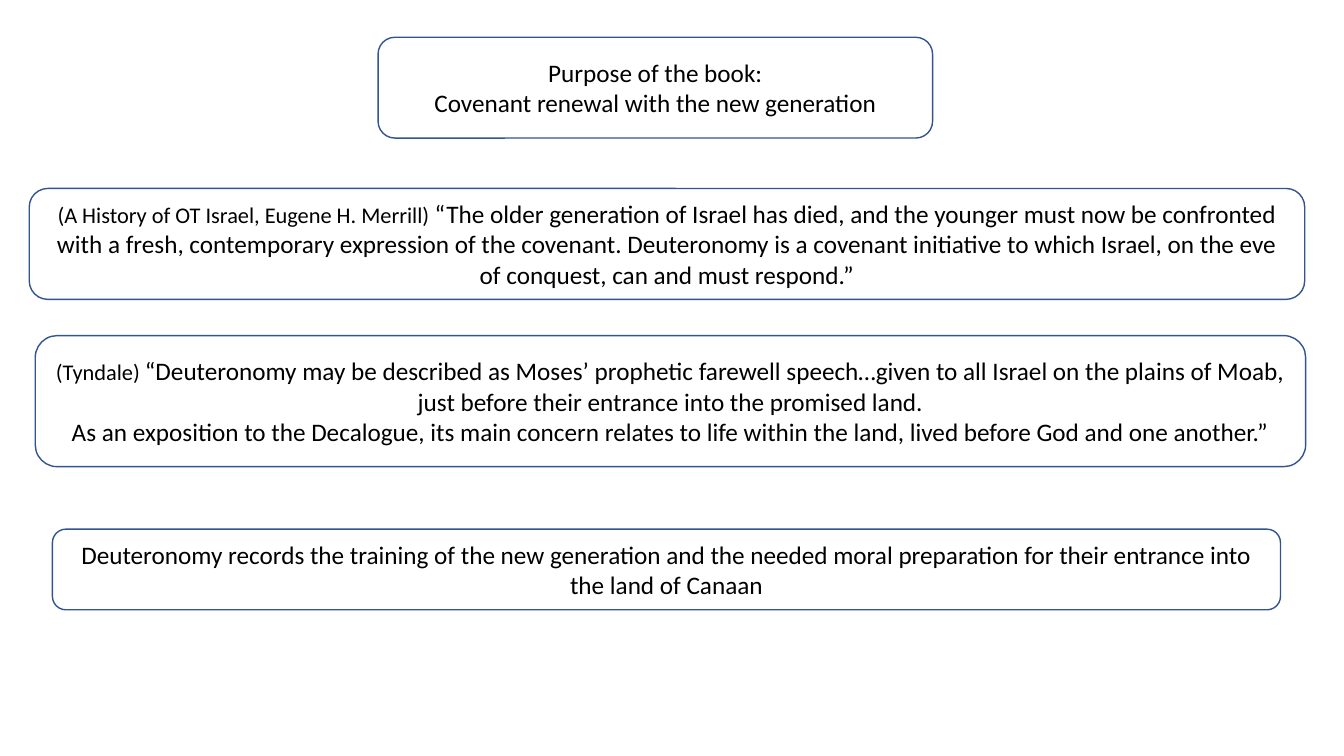
"""Build a slide on the purpose of the book of Deuteronomy."""
from dataclasses import dataclass

from pptx import Presentation
from pptx.dml.color import RGBColor as Rgb
from pptx.enum.shapes import MSO_SHAPE as Shape
from pptx.enum.text import MSO_ANCHOR as Anchor, PP_ALIGN as Align
from pptx.slide import Slide
from pptx.util import Inches, Pt


@dataclass
class Box:
    left: float
    top: float
    width: float
    height: float
    lines: list[str]
    source: str = ""


BOXES = [
    Box(3.75, 0.37, 5.5, 1, [
        "Purpose of the book:",
        "Covenant renewal with the new generation",
    ]),
    Box(0.35, 3.33, 12.6, 1.3, [
        "“Deuteronomy may be described as Moses’ prophetic farewell speech…given to all "
        "Israel on the plains of Moab, just before their entrance into the promised land.",
        "As an exposition to the Decalogue, its main concern relates to life within the "
        "land, lived before God and one another.”",
    ], "(Tyndale) "),
    Box(0.29, 1.87, 12.65, 1.1, [
        "“The older generation of Israel has died, and the younger must now be confronted "
        "with a fresh, contemporary expression of the covenant. Deuteronomy is a covenant "
        "initiative to which Israel, on the eve of conquest, can and must respond.”",
    ], "(A History of OT Israel, Eugene H. Merrill) "),
    Box(0.52, 5.25, 12.18, 0.8, [
        "Deuteronomy records the training of the new generation and the needed moral "
        "preparation for their entrance into the land of Canaan",
    ]),
]


def color(code: str) -> Rgb:
    return Rgb.from_string(code)


def draw(slide: Slide, box: Box) -> None:
    shape = slide.shapes.add_shape(
        Shape.ROUNDED_RECTANGLE, Inches(box.left), Inches(box.top),
        Inches(box.width), Inches(box.height))
    shape.shadow.inherit = False
    shape.fill.solid()
    shape.fill.fore_color.rgb = color("FFFFFF")
    shape.line.color.rgb = color("325491")
    shape.line.width = Pt(1)
    frame = shape.text_frame
    frame.word_wrap = True
    frame.vertical_anchor = Anchor.MIDDLE
    frame.text = "\n".join(box.lines)
    if box.source:
        first = frame.paragraphs[0]
        first.text = box.source
        first.add_run().text = box.lines[0]
    for para in frame.paragraphs:
        para.alignment = Align.CENTER
        for run in para.runs:
            run.font.name = "Calibri"
            run.font.size = Pt(16 if run.text == box.source else 18)
            run.font.color.rgb = color("000000")


def main() -> None:
    deck = Presentation()
    deck.slide_width = Inches(13.33)
    deck.slide_height = Inches(7.5)
    slide = deck.slides.add_slide(deck.slide_layouts[6])
    for box in BOXES:
        draw(slide, box)
    deck.save("out.pptx")


if __name__ == "__main__":
    main()
